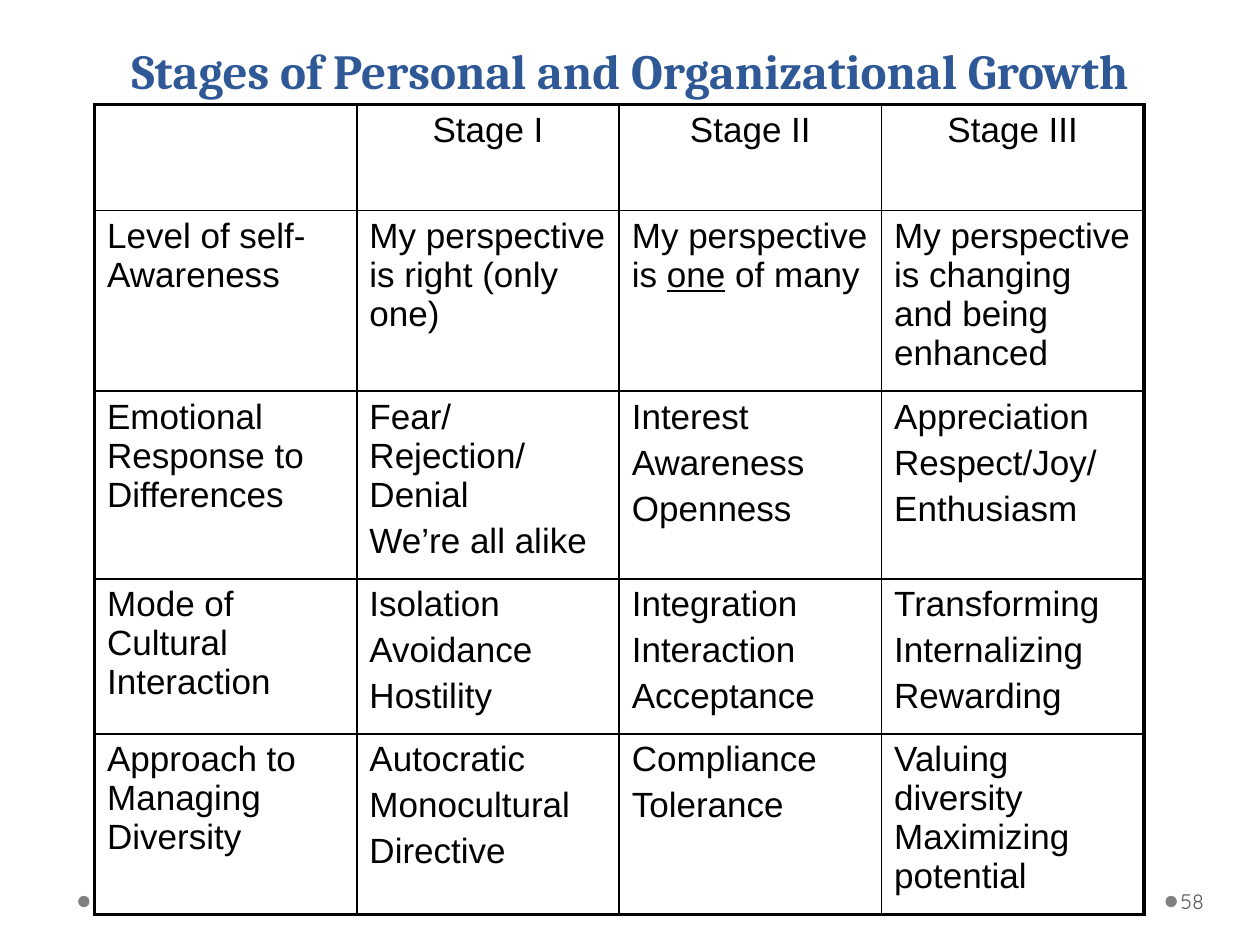
from lxml import etree
from pptx import Presentation
from pptx.dml.color import RGBColor
from pptx.enum import shapes, text
from pptx.oxml import ns
from pptx.util import Inches, Pt

COLORS = {"title": "2F5897", "ink": "000000", "dot": "808080", "number": "595959"}
COLUMN_WIDTH = 8.33 / 4
ROW_HEIGHTS = [0.84, 1.43, 1.23, 1.23, 1.43]
THIN, THICK = 1, 2.25

# Each cell is a list of paragraphs; underscores enclose an underlined word.
STAGES = [
    [[""], ["Stage I"], ["Stage II"], ["Stage III"]],
    [["Level of self-Awareness"],
     ["My perspective is right (only one)"],
     ["My perspective is _one_ of many"],
     ["My perspective is changing and being enhanced"]],
    [["Emotional Response to Differences"],
     ["Fear/Rejection/Denial", "We’re all alike"],
     ["Interest", "Awareness", "Openness"],
     ["Appreciation", "Respect/Joy/", "Enthusiasm"]],
    [["Mode of Cultural Interaction"],
     ["Isolation", "Avoidance", "Hostility"],
     ["Integration", "Interaction", "Acceptance"],
     ["Transforming", "Internalizing", "Rewarding"]],
    [["Approach to Managing Diversity"],
     ["Autocratic", "Monocultural", "Directive"],
     ["Compliance", "Tolerance"],
     ["Valuing diversity Maximizing potential"]],
]


def rgb(name):
    return RGBColor.from_string(COLORS[name])


def set_font(paragraph, family, size, color, bold=False):
    font = paragraph.font
    font.name, font.size, font.bold = family, Pt(size), bold
    font.color.rgb = rgb(color)


def add_dot(slide, left):
    dot = slide.shapes.add_shape(shapes.MSO_SHAPE.OVAL, Inches(left), Inches(7.11),
                                 Inches(0.09), Inches(0.09))
    dot.shadow.inherit = False
    dot.fill.solid()
    dot.fill.fore_color.rgb = rgb("dot")
    dot.line.fill.background()


def add_label(slide, words, left, top, width, height, anchor):
    """Add a one-paragraph text box and return its frame and paragraph."""
    frame = slide.shapes.add_textbox(Inches(left), Inches(top),
                                     Inches(width), Inches(height)).text_frame
    frame.word_wrap = True
    frame.vertical_anchor = anchor
    paragraph = frame.paragraphs[0]
    paragraph.text = words
    return frame, paragraph


def add_title(slide):
    _, title = add_label(slide, "Stages of Personal and Organizational Growth",
                         0.75, 0.17, 8.5, 0.67, text.MSO_ANCHOR.BOTTOM)
    title.alignment = text.PP_ALIGN.CENTER
    title.line_spacing = Pt(58)
    set_font(title, "Cambria", 28, "title", bold=True)


def add_page_number(slide):
    frame, number = add_label(slide, "58", 9.34, 6.95, 0.61, 0.4,
                              text.MSO_ANCHOR.MIDDLE)
    frame.margin_left, frame.margin_right = Inches(0.03), Inches(0.05)
    set_font(number, "Quicksand", 12, "number")


def set_borders(cell, widths):
    """Draw the left, right, top and bottom borders, widths in points."""
    properties = cell._tc.get_or_add_tcPr()
    for side, width in zip("LRTB", widths):
        line = etree.SubElement(properties, ns.qn(f"a:ln{side}"), w=str(Pt(width)))
        fill = etree.SubElement(line, ns.qn("a:solidFill"))
        etree.SubElement(fill, ns.qn("a:srgbClr"), val=COLORS["ink"])


def fill_cell(cell, lines, alignment):
    frame = cell.text_frame
    for index, line in enumerate(lines):
        paragraph = frame.add_paragraph() if index else frame.paragraphs[0]
        if index:
            paragraph.space_before = Pt(4)
        paragraph.alignment = alignment
        set_font(paragraph, "Arial", 20, "ink")
        for part, words in enumerate(line.split("_")):
            if words:
                run = paragraph.add_run()
                run.text = words
                if part % 2:
                    run.font.underline = True


def add_stage_table(slide):
    rows, columns = len(STAGES), len(STAGES[0])
    table = slide.shapes.add_table(rows, columns, Inches(0.75), Inches(0.83),
                                   Inches(COLUMN_WIDTH * columns),
                                   Inches(sum(ROW_HEIGHTS))).table
    table.first_row = table.horz_banding = False
    for column in table.columns:
        column.width = Inches(COLUMN_WIDTH)
    for r, (height, stage_row) in enumerate(zip(ROW_HEIGHTS, STAGES)):
        table.rows[r].height = Inches(height)
        alignment = text.PP_ALIGN.LEFT if r else text.PP_ALIGN.CENTER
        for c, lines in enumerate(stage_row):
            cell = table.cell(r, c)
            outer_sides = (c == 0, c == columns - 1, r == 0, r == rows - 1)
            set_borders(cell, [THICK if outer else THIN for outer in outer_sides])
            cell.fill.background()
            fill_cell(cell, lines, alignment)


def main():
    presentation = Presentation()
    presentation.slide_width, presentation.slide_height = Inches(10), Inches(7.5)
    slide = presentation.slides.add_slide(presentation.slide_layouts[6])
    for left in (9.25, 0.62):
        add_dot(slide, left)
    add_title(slide)
    add_stage_table(slide)
    add_page_number(slide)
    presentation.save("out.pptx")


if __name__ == "__main__":
    main()
